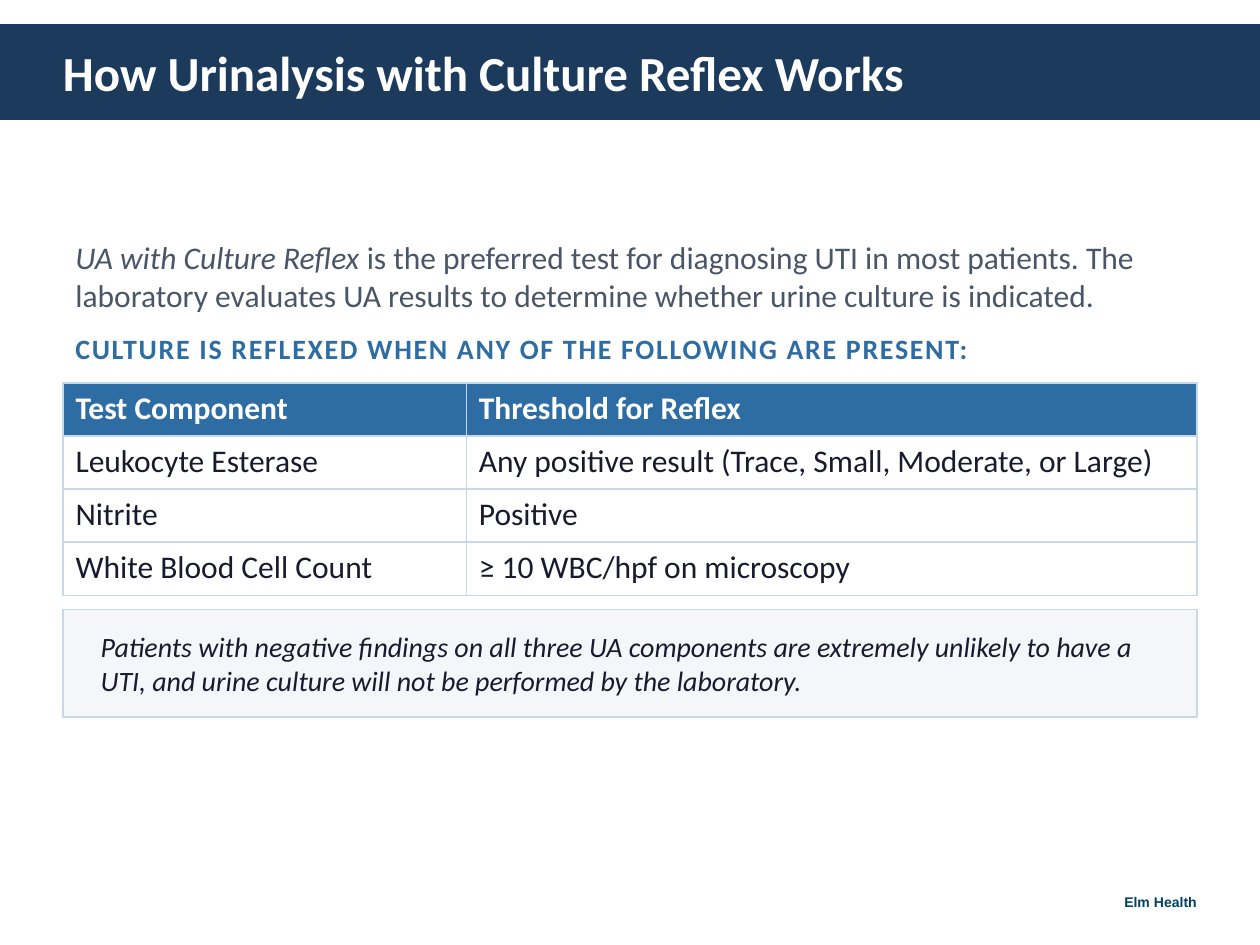
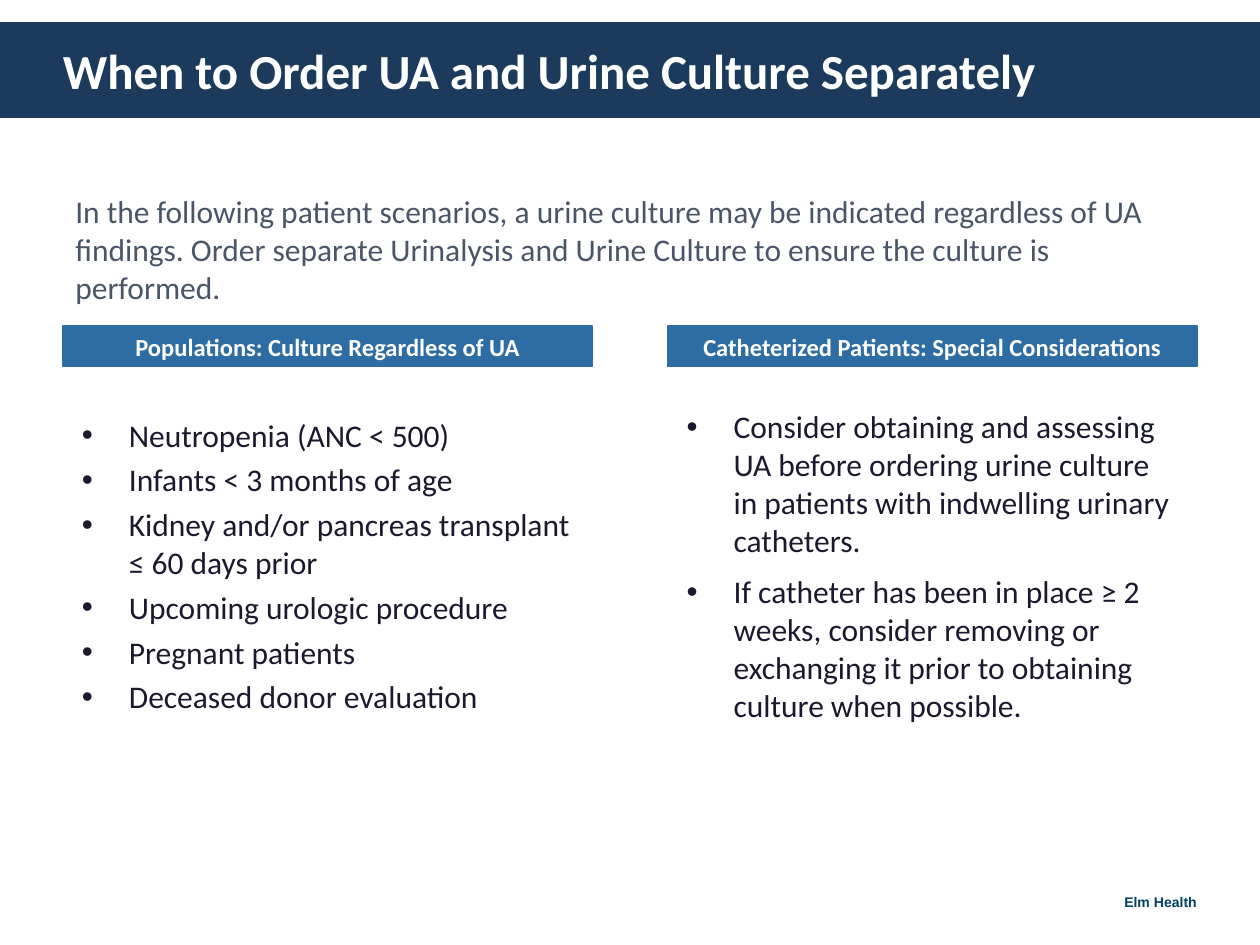
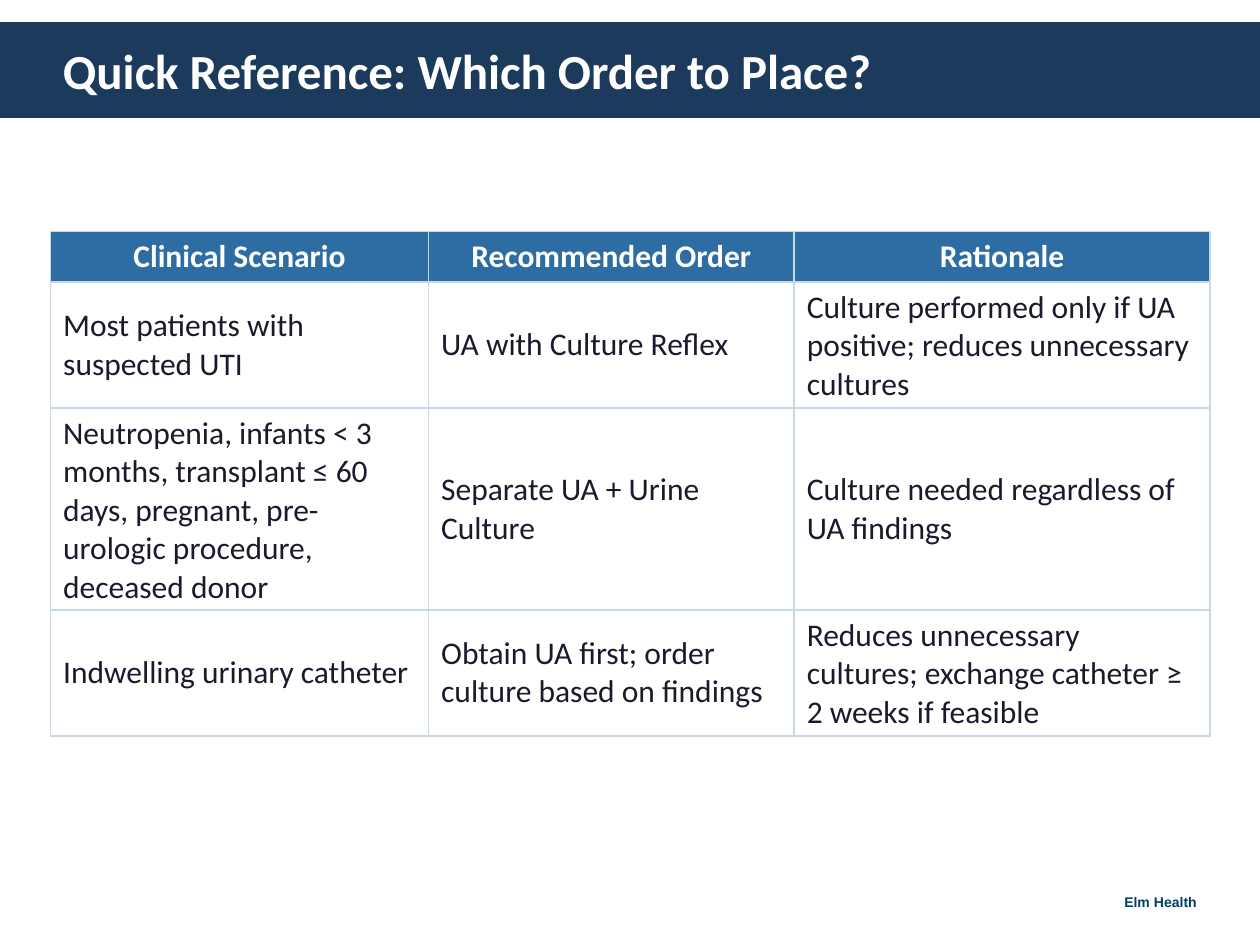
from dataclasses import dataclass

from lxml import etree
from pptx import Presentation
from pptx.dml.color import RGBColor
from pptx.enum.shapes import MSO_SHAPE
from pptx.enum.text import MSO_ANCHOR, PP_ALIGN
from pptx.oxml.ns import qn
from pptx.util import Cm, Pt

RECT = MSO_SHAPE.RECTANGLE
LEFT, CENTER, RIGHT = PP_ALIGN.LEFT, PP_ALIGN.CENTER, PP_ALIGN.RIGHT
TOP, MIDDLE, BOTTOM = MSO_ANCHOR.TOP, MSO_ANCHOR.MIDDLE, MSO_ANCHOR.BOTTOM


@dataclass(frozen=True)
class Theme:
    font: str = "Calibri"
    footer_font: str = "Arial"
    navy: str = "1B3A5C"
    blue: str = "2E6DA4"
    border: str = "C8D8E8"
    panel: str = "F4F6F9"
    white: str = "FFFFFF"
    ink: str = "1A1A2E"
    muted: str = "4A5568"
    footer: str = "004163"
    title_pt: int = 28
    body_pt: int = 18
    note_pt: int = 16
    head_pt: int = 14
    footer_pt: int = 8


T = Theme()

FOOTER = "Elm Health"

REFLEX = {
    "title": "How Urinalysis with Culture Reflex Works",
    "term": "UA with Culture Reflex ",
    "intro": "is the preferred test for diagnosing UTI in most patients. The laboratory "
             "evaluates UA results to determine whether urine culture is indicated.",
    "heading": "CULTURE IS REFLEXED WHEN ANY OF THE FOLLOWING ARE PRESENT:",
    "rows": [
        ("Test Component", "Threshold for Reflex"),
        ("Leukocyte Esterase", "Any positive result (Trace, Small, Moderate, or Large)"),
        ("Nitrite", "Positive"),
        ("White Blood Cell Count", "≥ 10 WBC/hpf on microscopy"),
    ],
    "note": "Patients with negative findings on all three UA components are extremely unlikely "
            "to have a UTI, and urine culture will not be performed by the laboratory.",
}

SEPARATE = {
    "title": "When to Order UA and Urine Culture Separately",
    "intro": "In the following patient scenarios, a urine culture may be indicated regardless of "
             "UA findings. Order separate Urinalysis and Urine Culture to ensure the culture is "
             "performed.",
    "columns": [
        ("Populations: Culture Regardless of UA", 4, [
            "Neutropenia (ANC < 500)",
            "Infants < 3 months of age",
            "Kidney and/or pancreas transplant ≤ 60 days prior",
            "Upcoming urologic procedure",
            "Pregnant patients",
            "Deceased donor evaluation",
        ]),
        ("Catheterized Patients: Special Considerations", 8, [
            "Consider obtaining and assessing UA before ordering urine culture in patients with "
            "indwelling urinary catheters.",
            "If catheter has been in place ≥ 2 weeks, consider removing or exchanging it prior "
            "to obtaining culture when possible.",
        ]),
    ],
}

REFERENCE = {
    "title": "Quick Reference: Which Order to Place?",
    "rows": [
        ("Clinical Scenario", "Recommended Order", "Rationale"),
        ("Most patients with suspected UTI", "UA with Culture Reflex",
         "Culture performed only if UA positive; reduces unnecessary cultures"),
        ("Neutropenia, infants < 3 months, transplant ≤ 60 days, pregnant, pre-urologic "
         "procedure, deceased donor", "Separate UA + Urine Culture",
         "Culture needed regardless of UA findings"),
        ("Indwelling urinary catheter", "Obtain UA first; order culture based on findings",
         "Reduces unnecessary cultures; exchange catheter ≥ 2 weeks if feasible"),
    ],
}

SLIDE_W, SLIDE_H = 25.4, 19.05
MARGIN = 1.27
CONTENT_W = SLIDE_W - 2 * MARGIN


def rgb(color):
    return RGBColor.from_string(color)


def style(p, size, color, bold=False, italic=False, align=LEFT, font=T.font):
    p.alignment = align
    for r in p.runs:
        r.font.name = font
        r.font.size = Pt(size)
        r.font.color.rgb = rgb(color)
        r.font.bold = bold
        r.font.italic = italic


def add_text(s, box, text, size, color, anchor=MIDDLE, **look):
    tf = s.shapes.add_textbox(*map(Cm, box)).text_frame
    tf.word_wrap = True
    tf.vertical_anchor = anchor
    tf.text = text
    for p in tf.paragraphs:
        style(p, size, color, **look)
    return tf


def add_panel(s, box, fill, line, text, size, color, inset=0.25, **look):
    sp = s.shapes.add_shape(RECT, *map(Cm, box))
    sp.shadow.inherit = False
    sp.fill.solid()
    sp.fill.fore_color.rgb = rgb(fill)
    sp.line.color.rgb = rgb(line)
    sp.line.width = Pt(1)
    tf = sp.text_frame
    tf.word_wrap = True
    tf.vertical_anchor = MIDDLE
    tf.margin_left = tf.margin_right = Cm(inset)
    tf.text = text
    style(tf.paragraphs[0], size, color, **look)


def add_borders(cell):
    tc_pr = cell._tc.get_or_add_tcPr()
    for side in ("lnL", "lnR", "lnT", "lnB"):
        ln = etree.SubElement(tc_pr, qn(f"a:{side}"), w=str(Pt(1)))
        fill = etree.SubElement(ln, qn("a:solidFill"))
        etree.SubElement(fill, qn("a:srgbClr"), val=T.border)


def add_grid(s, left, top, widths, heights, rows, anchor=TOP, head_align=LEFT):
    box = (left, top, sum(widths), sum(heights))
    table = s.shapes.add_table(len(rows), len(widths), *map(Cm, box)).table
    for column, width in zip(table.columns, widths):
        column.width = Cm(width)
    for i, (row, height) in enumerate(zip(rows, heights)):
        table.rows[i].height = Cm(height)
        head = i == 0
        for j, text in enumerate(row):
            cell = table.cell(i, j)
            add_borders(cell)
            cell.fill.solid()
            cell.fill.fore_color.rgb = rgb(T.blue if head else T.white)
            cell.vertical_anchor = anchor
            cell.text = text
            style(cell.text_frame.paragraphs[0], T.body_pt, T.white if head else T.ink,
                  bold=head, align=head_align if head else LEFT)


def add_bullets(s, box, items, gap):
    tf = add_text(s, box, "\n".join(items), T.body_pt, T.ink)
    for p in tf.paragraphs:
        p.space_after = Pt(gap)
        p_pr = p._p.get_or_add_pPr()
        p_pr.set("marL", str(Cm(0.95)))
        p_pr.set("indent", str(-Cm(0.95)))
        etree.SubElement(p_pr, qn("a:buFont"), typeface="Arial")
        etree.SubElement(p_pr, qn("a:buChar"), char="•")


def new_slide(prs, title, band_top=0.46):
    s = prs.slides.add_slide(prs.slide_layouts[6])
    tf = add_text(s, (21.01, 17.78, 3.12, 0.58), FOOTER, T.footer_pt, T.footer,
                  anchor=BOTTOM, bold=True, align=RIGHT, font=T.footer_font)
    tf.margin_left = tf.margin_right = tf.margin_top = tf.margin_bottom = 0
    add_panel(s, (0, band_top, SLIDE_W, 1.9), T.navy, T.navy, title, T.title_pt, T.white,
              inset=MARGIN, bold=True)
    return s


def build_reflex(prs):
    s = new_slide(prs, REFLEX["title"], band_top=0.51)
    tf = add_text(s, (MARGIN, 4.8, CONTENT_W, 1.52), REFLEX["term"], T.body_pt, T.muted)
    p = tf.paragraphs[0]
    p.add_run().text = REFLEX["intro"]
    style(p, T.body_pt, T.muted)
    p.runs[0].font.italic = True
    tf = add_text(s, (MARGIN, 6.58, CONTENT_W, 0.89), REFLEX["heading"], T.note_pt, T.blue,
                  bold=True)
    tf.paragraphs[0].runs[0]._r.get_or_add_rPr().set("spc", "100")
    rows = REFLEX["rows"]
    add_grid(s, MARGIN, 7.72, (8.13, 14.73), [1.07] * len(rows), rows)
    add_panel(s, (MARGIN, 12.29, CONTENT_W, 2.16), T.panel, T.border, REFLEX["note"],
              T.note_pt, T.ink, inset=0.76, italic=True)


def build_separate(prs):
    s = new_slide(prs, SEPARATE["title"])
    add_text(s, (MARGIN, 4.19, CONTENT_W, 1.65), SEPARATE["intro"], T.body_pt, T.muted)
    width, pad = 10.67, 0.13
    step = CONTENT_W - width
    for i, (head, gap, items) in enumerate(SEPARATE["columns"]):
        x = MARGIN + i * step
        add_panel(s, (x, 6.58, width, 0.81), T.blue, T.blue, head, T.head_pt, T.white,
                  bold=True, align=CENTER)
        add_bullets(s, (x + pad, 7.59, width - 2 * pad, 7.62), items, gap)


def build_reference(prs):
    s = new_slide(prs, REFERENCE["title"])
    add_grid(s, 1.02, 4.67, (7.62, 7.37, 8.38), (0.97, 2.16, 2.41, 2.29),
             REFERENCE["rows"], anchor=MIDDLE, head_align=CENTER)


def main():
    prs = Presentation()
    prs.slide_width, prs.slide_height = Cm(SLIDE_W), Cm(SLIDE_H)
    build_reflex(prs)
    build_separate(prs)
    build_reference(prs)
    prs.save("out.pptx")


if __name__ == "__main__":
    main()
